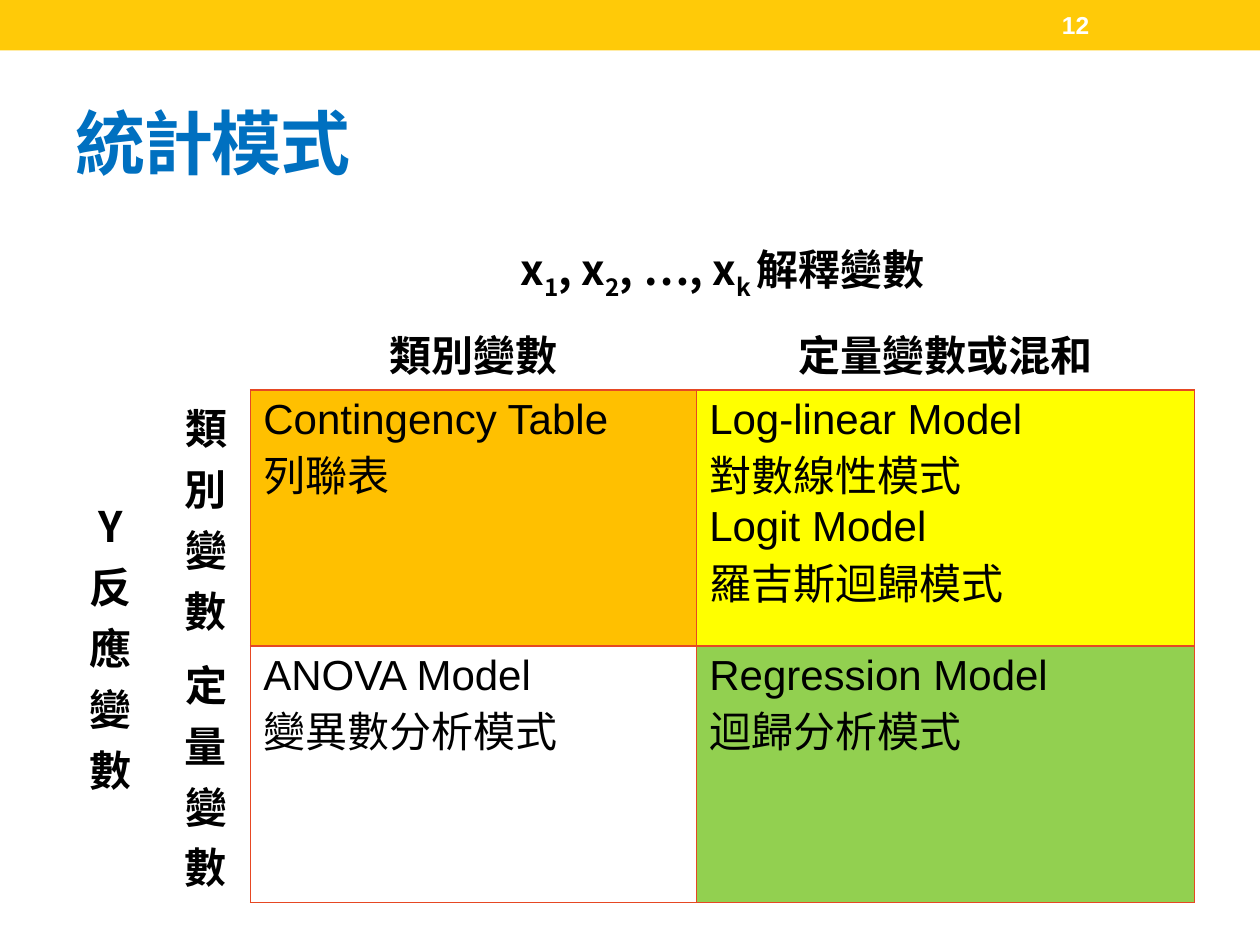
"""Build a slide that sorts statistical models by variable type."""
import lxml.etree
import pptx
import pptx.dml.color
import pptx.enum.shapes
import pptx.enum.text
import pptx.oxml.ns
import pptx.util

Inches = pptx.util.Inches
Align = pptx.enum.text.PP_ALIGN
Anchor = pptx.enum.text.MSO_ANCHOR
qn = pptx.oxml.ns.qn

COLORS = {
    "white": "FFFFFF", "black": "000000", "band": "FFCA08", "title": "0070C0",
    "rule": "E64823", "orange": "FFC000", "yellow": "FFFF00", "green": "92D050",
}
LATIN_FONT = "Arial"
CJK_FONT = "Noto Sans CJK SC"
COLUMN_WIDTHS = (0.8, 0.71, 3.54, 3.95)
ROW_HEIGHTS = (0.73, 0.55, 1.88, 1.88)
EXPLANATORY_RUNS = (
    ("x", False), ("1", True), (", x", False), ("2", True),
    (", …, x", False), ("k ", True), ("解釋變數", False),
)
HEADINGS = {
    (1, 2): ("類別變數",),
    (1, 3): ("定量變數或混和",),
    (2, 0): ("Y", "反應", "變數"),
    (2, 1): ("類別", "變數"),
    (3, 1): ("定量", "變數"),
}
MODELS = {
    (2, 2): ("orange", ("Contingency Table", "列聯表")),
    (2, 3): ("yellow", ("Log-linear Model", "對數線性模式", "Logit Model", "羅吉斯迴歸模式")),
    (3, 2): (None, ("ANOVA Model", "變異數分析模式")),
    (3, 3): ("green", ("Regression Model", "迴歸分析模式")),
}


def rgb(name):
    return pptx.dml.color.RGBColor.from_string(COLORS[name])


def add_run(paragraph, text, size=24, color="black", bold=True, font=LATIN_FONT):
    run = paragraph.add_run()
    run.text = text
    run.font.size = pptx.util.Pt(size)
    run.font.bold = bold
    run.font.name = font
    run.font.color.rgb = rgb(color)
    properties = run._r.get_or_add_rPr()
    east_asian = lxml.etree.SubElement(properties, qn("a:ea"))
    east_asian.set("typeface", CJK_FONT)
    return properties


def add_band(slide, width):
    band = slide.shapes.add_shape(
        pptx.enum.shapes.MSO_SHAPE.RECTANGLE, 0, 0, width, Inches(0.4))
    band.shadow.inherit = False
    band.fill.solid()
    band.fill.fore_color.rgb = rgb("band")
    band.line.fill.background()


def add_slide_number(slide, text):
    box = slide.shapes.add_textbox(Inches(8.33), Inches(0.02), Inches(1.17), Inches(0.36))
    box.text_frame.word_wrap = True
    box.text_frame.vertical_anchor = Anchor.MIDDLE
    add_run(box.text_frame.paragraphs[0], text, size=14, color="white")


def set_title(slide, text):
    title = slide.shapes.title
    title.left, title.top = Inches(0.5), Inches(0.58)
    title.width, title.height = Inches(9), Inches(1.08)
    title.text_frame.vertical_anchor = Anchor.MIDDLE
    paragraph = title.text_frame.paragraphs[0]
    paragraph.alignment = Align.LEFT
    add_run(paragraph, text, size=40, color="title").set("spc", "-100")


def set_borders(cell, sides):
    properties = cell._tc.get_or_add_tcPr()
    for side in "LRTB":
        line = lxml.etree.SubElement(
            properties, qn(f"a:ln{side}"), w=str(pptx.util.Pt(1)))
        fill = lxml.etree.SubElement(line, qn("a:solidFill"))
        color = "rule" if side in sides else "white"
        lxml.etree.SubElement(fill, qn("a:srgbClr"), val=COLORS[color])


def style_cell(cell, row, column):
    if (row, column) in MODELS:
        sides = "LRTB"
    elif (row + 1, column) in MODELS:
        sides = "B"
    elif (row, column + 1) in MODELS:
        sides = "R"
    else:
        sides = ""
    set_borders(cell, sides)
    fill = MODELS.get((row, column), (None, ()))[0]
    if fill:
        cell.fill.solid()
        cell.fill.fore_color.rgb = rgb(fill)
    else:
        cell.fill.background()


def write_lines(cell, lines, heading):
    frame = cell.text_frame
    if heading:
        cell.vertical_anchor = Anchor.MIDDLE
    for index, line in enumerate(lines):
        paragraph = frame.add_paragraph() if index else frame.paragraphs[0]
        paragraph.alignment = Align.CENTER if heading else Align.LEFT
        font = CJK_FONT if line == "Y" else LATIN_FONT
        add_run(paragraph, line, bold=heading, font=font)


def write_explanatory_heading(cell):
    cell.vertical_anchor = Anchor.MIDDLE
    paragraph = cell.text_frame.paragraphs[0]
    paragraph.alignment = Align.CENTER
    for text, subscript in EXPLANATORY_RUNS:
        properties = add_run(paragraph, text, font=CJK_FONT)
        if subscript:
            properties.set("baseline", "-25000")


def add_model_table(slide):
    frame = slide.shapes.add_table(
        len(ROW_HEIGHTS), len(COLUMN_WIDTHS), Inches(0.48), Inches(1.78),
        Inches(sum(COLUMN_WIDTHS)), Inches(sum(ROW_HEIGHTS)))
    table = frame.table
    table.first_row = table.horz_banding = False
    for column, width in zip(table.columns, COLUMN_WIDTHS):
        column.width = Inches(width)
    for row, height in zip(table.rows, ROW_HEIGHTS):
        row.height = Inches(height)
    for row in range(len(ROW_HEIGHTS)):
        for column in range(len(COLUMN_WIDTHS)):
            style_cell(table.cell(row, column), row, column)
    table.cell(0, 2).merge(table.cell(0, 3))
    table.cell(2, 0).merge(table.cell(3, 0))
    write_explanatory_heading(table.cell(0, 2))
    for position, lines in HEADINGS.items():
        write_lines(table.cell(*position), lines, heading=True)
    for position, (_, lines) in MODELS.items():
        write_lines(table.cell(*position), lines, heading=False)


def main():
    presentation = pptx.Presentation()
    presentation.slide_width = Inches(10)
    presentation.slide_height = Inches(7.5)
    slide = presentation.slides.add_slide(presentation.slide_layouts[5])
    add_band(slide, presentation.slide_width)
    set_title(slide, "統計模式")
    add_model_table(slide)
    add_slide_number(slide, "12")
    presentation.save("out.pptx")


if __name__ == "__main__":
    main()
